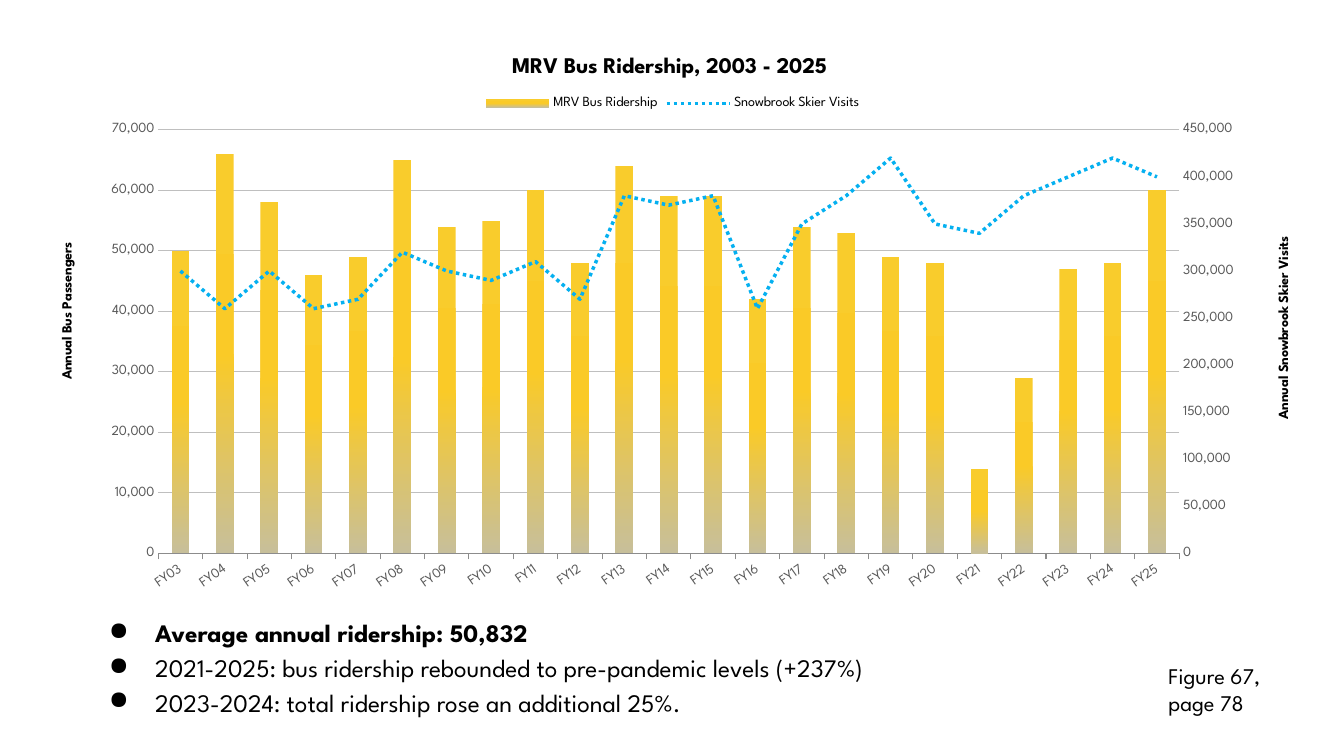
from copy import deepcopy
from dataclasses import dataclass

from lxml import etree
from pptx import Presentation
from pptx.chart.axis import ValueAxis
from pptx.chart.data import CategoryChartData
from pptx.dml.color import RGBColor
from pptx.enum.chart import XL_CHART_TYPE, XL_LEGEND_POSITION, XL_MARKER_STYLE, XL_TICK_MARK
from pptx.enum.dml import MSO_LINE
from pptx.enum.text import MSO_AUTO_SIZE
from pptx.oxml import parse_xml
from pptx.oxml.ns import nsdecls, qn
from pptx.util import Inches, Pt

COLUMNS = XL_CHART_TYPE.COLUMN_CLUSTERED
LEGEND_TOP = XL_LEGEND_POSITION.TOP
NO_MARKER = XL_MARKER_STYLE.NONE
TICK_OUT, TICK_NONE = XL_TICK_MARK.OUTSIDE, XL_TICK_MARK.NONE
DOTTED = MSO_LINE.ROUND_DOT
GROW = MSO_AUTO_SIZE.SHAPE_TO_FIT_TEXT

FONT = "League Spartan"
COLORS = {
    "text": "000000", "labels": "595959", "grid": "BFBFBF", "axis": "8C8C8C",
    "visits": "05B0F0", "bar_top": "F9CC2C", "bar_middle": "FACA27", "bar_bottom": "C7BF9A",
}
BAR_STOPS = [(0, "bar_top"), (50, "bar_middle"), (100, "bar_bottom")]

FISCAL_YEARS = [f"FY{year:02d}" for year in range(3, 26)]
RIDERSHIP_THOUSANDS = [50, 66, 58, 46, 49, 65, 54, 55, 60, 48, 64, 59,
                       59, 42, 54, 53, 49, 48, 14, 29, 47, 48, 60]
VISITS_THOUSANDS = [300, 260, 300, 260, 270, 320, 300, 290, 310, 270, 380, 370,
                    380, 260, 350, 380, 420, 350, 340, 380, 400, 420, 400]


@dataclass
class Bullet:
    text: str
    bold: bool = False


@dataclass
class AxisStyle:
    title: str
    maximum: int
    step: int
    title_x: float
    title_y: float


BULLETS = [
    Bullet("Average annual ridership: 50,832", True),
    Bullet("2021-2025: bus ridership rebounded to pre-pandemic levels (+237%)"),
    Bullet("2023-2024: total ridership rose an additional 25%."),
]
PASSENGER_AXIS = AxisStyle("Annual Bus Passengers", 70000, 10000, 0.01, 0.35)
VISITS_AXIS = AxisStyle("Annual Snowbrook Skier Visits", 450000, 50000, 0.98, 0.34)


def style_font(font, size: float, color: str = "text", bold: bool = False) -> None:
    font.name = FONT
    font.size = Pt(size)
    font.bold = bold
    font.color.rgb = RGBColor.from_string(COLORS[color])


def set_layout(parent, **settings) -> None:
    """Place a chart title or plot area by fractions of the chart."""
    for old_layout in parent.findall(qn("c:layout")):
        parent.remove(old_layout)
    layout = etree.Element(qn("c:layout"))
    manual = etree.SubElement(layout, qn("c:manualLayout"))
    for name, value in settings.items():
        etree.SubElement(manual, qn(f"c:{name}")).set("val", str(value))
    parent.insert(1 if parent.find(qn("c:tx")) is not None else 0, layout)


def style_value_axis(axis: ValueAxis, style: AxisStyle) -> None:
    axis.minimum_scale, axis.maximum_scale = 0, style.maximum
    axis.major_unit = style.step
    axis.major_tick_mark = axis.minor_tick_mark = TICK_NONE
    axis.format.line.fill.background()
    axis.tick_labels.number_format = "#,##0"
    axis.tick_labels.number_format_is_linked = False
    style_font(axis.tick_labels.font, 10, "labels")
    title = axis.axis_title
    title.text_frame.text = style.title
    style_font(title.text_frame.paragraphs[0].runs[0].font, 10, bold=True)
    body = title._element.find(".//" + qn("a:bodyPr"))
    body.set("rot", "-5400000")
    body.set("vert", "horz")
    set_layout(title._element, xMode="edge", yMode="edge", x=style.title_x, y=style.title_y)


def move_visits_to_right_axis(chart) -> None:
    """Turn the second series into a line with its own value axis."""
    plot_area = chart._chartSpace.chart.plotArea
    bar_chart = plot_area.find(qn("c:barChart"))
    visits = bar_chart.findall(qn("c:ser"))[1]
    for invert in visits.findall(qn("c:invertIfNegative")):
        visits.remove(invert)
    line_chart = parse_xml(
        f'<c:lineChart {nsdecls("c")}><c:grouping val="standard"/><c:varyColors val="0"/>'
        '<c:marker val="1"/><c:axId val="5001"/><c:axId val="5002"/></c:lineChart>')
    line_chart.insert(2, visits)
    bar_chart.addnext(line_chart)

    left_axis = plot_area.find(qn("c:valAx"))
    right_axis = deepcopy(left_axis)
    hidden_axis = deepcopy(plot_area.find(qn("c:catAx")))
    left_axis.addnext(right_axis)
    right_axis.addnext(hidden_axis)
    for axis, own_id, other_id in ((hidden_axis, "5001", "5002"), (right_axis, "5002", "5001")):
        axis.find(qn("c:axId")).set("val", own_id)
        axis.find(qn("c:crossAx")).set("val", other_id)
    hidden_axis.find(qn("c:delete")).set("val", "1")
    right_axis.find(qn("c:axPos")).set("val", "r")
    right_axis.find(qn("c:crosses")).set("val", "max")
    right_value_axis = ValueAxis(right_axis)
    right_value_axis.has_major_gridlines = False
    style_value_axis(right_value_axis, VISITS_AXIS)


def add_ridership_chart(slide) -> None:
    data = CategoryChartData(number_format="#,##0")
    data.categories = FISCAL_YEARS
    data.add_series("MRV Bus Ridership", [value * 1000 for value in RIDERSHIP_THOUSANDS])
    data.add_series("Snowbrook Skier Visits", [value * 1000 for value in VISITS_THOUSANDS])
    chart = slide.shapes.add_chart(
        COLUMNS, Inches(0.45), Inches(0.34), Inches(12.44), Inches(5.82), data).chart
    style_font(chart.font, 10)
    chart.has_title = True
    chart.chart_title.text_frame.text = "MRV Bus Ridership, 2003 - 2025 "
    style_font(chart.chart_title.text_frame.paragraphs[0].runs[0].font, 16, bold=True)
    chart.has_legend = True
    chart.legend.position = LEGEND_TOP
    chart.legend.include_in_layout = False
    style_font(chart.legend.font, 10)

    years = chart.category_axis
    years.major_tick_mark, years.minor_tick_mark = TICK_OUT, TICK_NONE
    years.format.line.color.rgb = RGBColor.from_string(COLORS["axis"])
    style_font(years.tick_labels.font, 10, "labels")
    years._element.find(qn("c:txPr")).find(qn("a:bodyPr")).set("rot", "-2100000")
    passengers = chart.value_axis
    passengers.has_major_gridlines = True
    grid_line = passengers.major_gridlines.format.line
    grid_line.color.rgb = RGBColor.from_string(COLORS["grid"])
    grid_line.width = Pt(0.75)
    style_value_axis(passengers, PASSENGER_AXIS)

    move_visits_to_right_axis(chart)
    bars, lines = chart.plots
    bars.gap_width = 150
    bars.vary_by_categories = False
    stops = "".join(f'<a:gs pos="{position * 1000}"><a:srgbClr val="{COLORS[name]}"/></a:gs>'
                    for position, name in BAR_STOPS)
    bars.series[0]._element.get_or_add_spPr().append(parse_xml(
        f'<a:gradFill {nsdecls("a")}><a:gsLst>{stops}</a:gsLst><a:lin ang="5400000"/></a:gradFill>'))
    visits = lines.series[0]
    visits.smooth = False
    visits.marker.style = NO_MARKER
    visits.format.line.color.rgb = RGBColor.from_string(COLORS["visits"])
    visits.format.line.width = Pt(2.5)
    visits.format.line.dash_style = DOTTED
    set_layout(chart._chartSpace.chart.plotArea, layoutTarget="inner", xMode="edge",
               yMode="edge", x=0.09, y=0.163, w=0.814, h=0.722)


def add_findings(slide) -> None:
    box = slide.shapes.add_textbox(Inches(0.74), Inches(5.95), Inches(12.24), Inches(1.36))
    frame = box.text_frame
    frame.word_wrap = True
    frame.margin_left = frame.margin_right = Inches(0.13)
    frame.margin_top = frame.margin_bottom = Inches(0.13)
    frame.text = "\n".join(bullet.text for bullet in BULLETS)
    for paragraph, bullet in zip(frame.paragraphs, BULLETS):
        paragraph.line_spacing = 1.15
        properties = paragraph._p.get_or_add_pPr()
        properties.set("marL", str(Inches(0.67)))
        properties.set("indent", str(Inches(-0.46)))
        color = etree.SubElement(properties, qn("a:buClr"))
        etree.SubElement(color, qn("a:srgbClr")).set("val", COLORS["text"])
        etree.SubElement(properties, qn("a:buChar")).set("char", "●")
        style_font(paragraph.runs[0].font, 18, bold=bullet.bold)


def add_figure_reference(slide) -> None:
    box = slide.shapes.add_textbox(Inches(11.49), Inches(6.52), Inches(1.39), Inches(0.64))
    frame = box.text_frame
    frame.word_wrap = True
    frame.auto_size = GROW
    frame.text = "Figure 67, page 78"
    style_font(frame.paragraphs[0].runs[0].font, 16)


def main() -> None:
    presentation = Presentation()
    presentation.slide_width, presentation.slide_height = Inches(13.33), Inches(7.5)
    slide = presentation.slides.add_slide(presentation.slide_layouts[6])
    add_findings(slide)
    add_ridership_chart(slide)
    add_figure_reference(slide)
    presentation.save("out.pptx")


if __name__ == "__main__":
    main()
